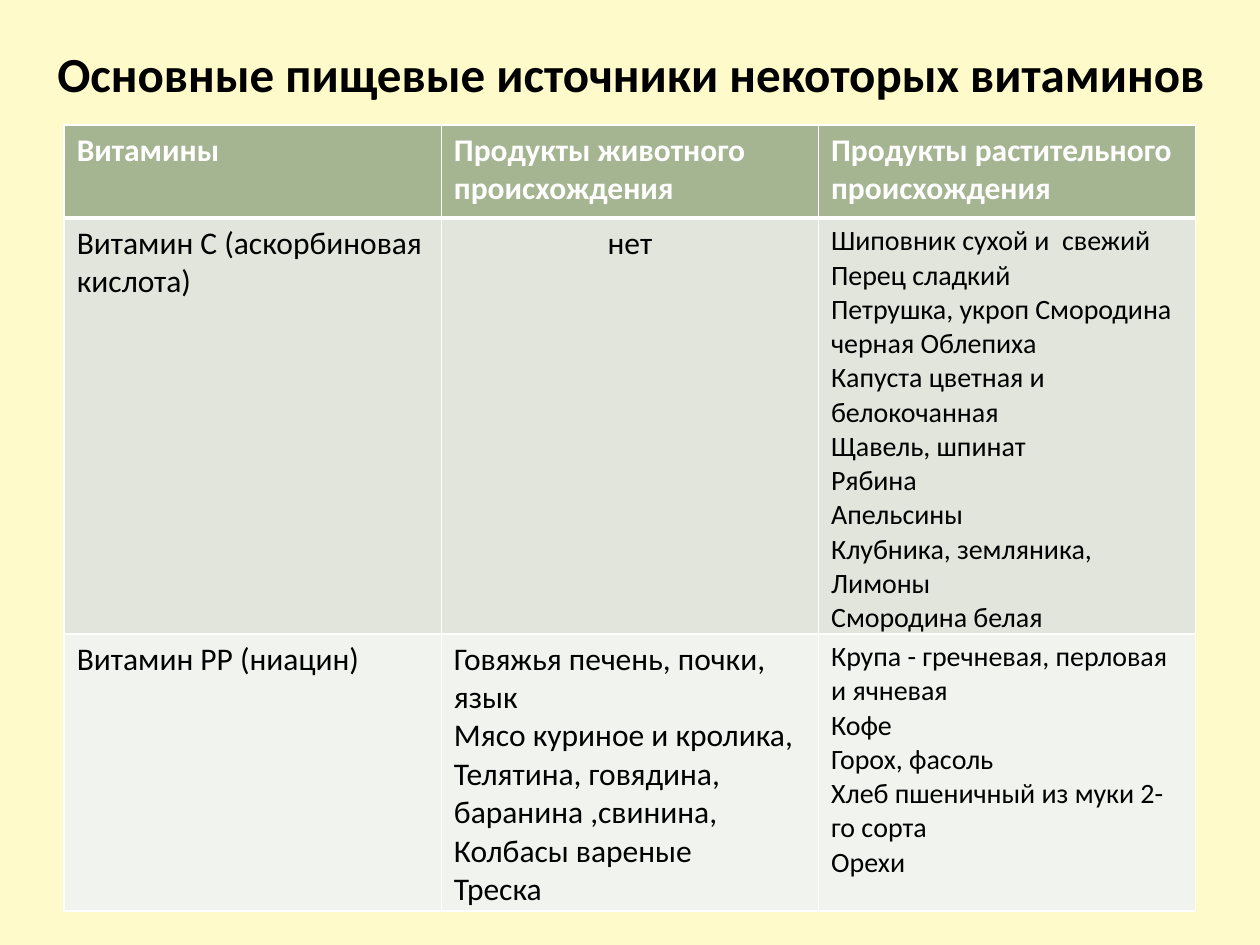
from lxml import etree
from pptx import Presentation
from pptx.dml.color import RGBColor
from pptx.enum.text import PP_ALIGN
from pptx.oxml.ns import qn
from pptx.util import Inches, Pt

LEFT, CENTER = PP_ALIGN.LEFT, PP_ALIGN.CENTER
CREAM = RGBColor(0xFE, 0xFA, 0xC9)
SAGE = RGBColor(0xA5, 0xB5, 0x92)
BAND_DARK = RGBColor(0xE1, 0xE5, 0xDC)
BAND_LIGHT = RGBColor(0xF0, 0xF3, 0xEE)
WHITE = RGBColor(0xFF, 0xFF, 0xFF)
BLACK = RGBColor(0, 0, 0)

TITLE = "Основные пищевые источники некоторых витаминов"
HEADER = [
    ["Витамины"],
    ["Продукты животного происхождения"],
    ["Продукты растительного происхождения"],
]
VITAMIN_C = [
    ["Витамин С (аскорбиновая кислота)"],
    ["нет"],
    ["Шиповник сухой и  свежий", "Перец сладкий",
     "Петрушка, укроп Смородина черная Облепиха",
     "Капуста цветная и белокочанная", "Щавель, шпинат", "Рябина",
     "Апельсины", "Клубника, земляника, Лимоны", "Смородина белая"],
]
VITAMIN_PP = [
    ["Витамин РР (ниацин)"],
    ["Говяжья печень, почки, язык",
     "Мясо куриное и кролика, Телятина, говядина, баранина ,свинина, "
     "Колбасы вареные",
     "Треска"],
    ["Крупа - гречневая, перловая и ячневая", "Кофе", "Горох, фасоль",
     "Хлеб пшеничный из муки 2-го сорта", "Орехи"],
]
ROW_HEIGHTS = [0.74, 3.3, 2.2]


class SlideBuilder:
    font = "Calibri"

    def __init__(self, prs):
        self.w, self.h = prs.slide_width, prs.slide_height
        self.s = prs.slides.add_slide(prs.slide_layouts[6])
        fill = self.s.background.fill
        fill.solid()
        fill.fore_color.rgb = CREAM

    def box(self, x, y, w, h):
        """Turn shares of the slide's size into lengths."""
        return [round(share * size) for share, size in
                zip((x, y, w, h), (self.w, self.h) * 2)]

    def set_text(self, tf, lines, size, color, bold=False, align=LEFT):
        tf.word_wrap = True
        for i, line in enumerate(lines):
            p = tf.add_paragraph() if i else tf.paragraphs[0]
            p.text = line
            p.alignment = align
            font = p.font
            font.name, font.size, font.bold = self.font, Pt(size), bold
            font.color.rgb = color

    def title(self, text, *shares):
        sp = self.s.shapes.add_textbox(*self.box(*shares))
        self.set_text(sp.text_frame, [text], 28, BLACK, True, CENTER)

    def table(self, rows, heights, *shares):
        """Add a table with a header row, banded rows and equal columns."""
        frame = self.s.shapes.add_table(len(rows), len(rows[0]), *self.box(*shares))
        table = frame.table
        fills = [SAGE, BAND_DARK, BAND_LIGHT]
        for r, (row, height) in enumerate(zip(rows, heights)):
            table.rows[r].height = Inches(height)
            header = r == 0
            for c, lines in enumerate(row):
                cell = table.cell(r, c)
                cell.margin_bottom = 0
                self.borders(cell, top=3 if r == 1 else 1, bottom=3 if header else 1)
                cell.fill.solid()
                cell.fill.fore_color.rgb = fills[r]
                size = 16 if c == 2 and not header else 18
                align = CENTER if lines == ["нет"] else LEFT
                self.set_text(cell.text_frame, lines, size,
                              WHITE if header else BLACK, header, align)

    def borders(self, cell, top, bottom):
        tc_pr = cell._tc.get_or_add_tcPr()
        for side, width in zip("LRTB", (1, 1, top, bottom)):
            ln = etree.SubElement(tc_pr, qn(f"a:ln{side}"), w=str(Pt(width)))
            fill = etree.SubElement(ln, qn("a:solidFill"))
            etree.SubElement(fill, qn("a:srgbClr"), val=str(WHITE))


def main():
    prs = Presentation()
    prs.slide_width, prs.slide_height = Inches(10), Inches(7.5)
    slide = SlideBuilder(prs)
    slide.title(TITLE, 0.028, 0.04, 0.945, 0.076)
    slide.table([HEADER, VITAMIN_C, VITAMIN_PP], ROW_HEIGHTS,
                0.051, 0.132, 0.898, 0.832)
    prs.save("out.pptx")


if __name__ == "__main__":
    main()
